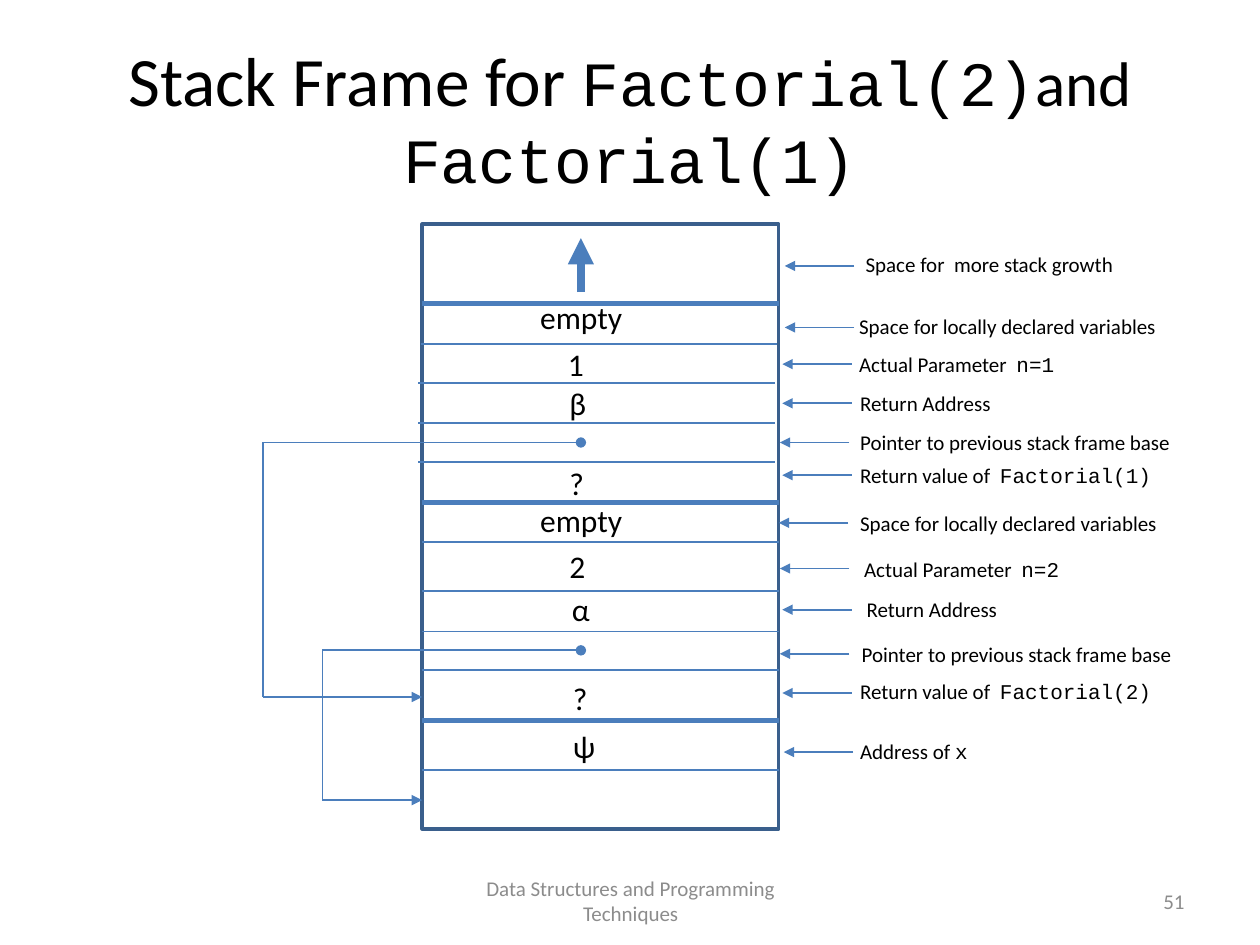
from lxml.etree import SubElement
from pptx import Presentation
from pptx.dml.color import RGBColor
from pptx.enum.shapes import MSO_CONNECTOR, MSO_SHAPE
from pptx.enum.text import MSO_ANCHOR, PP_ALIGN
from pptx.oxml.ns import qn
from pptx.util import Cm, Pt

COLORS = {"text": "000000", "muted": "8C8C8C", "line": "4B7EBC",
          "border": "3A5F8C", "fill": "FFFFFF"}
SANS, MONO = "Calibri", "Courier New"

STACK_LEFT, STACK_TOP, STACK_WIDTH, STACK_HEIGHT = 8.51, 4.52, 7.19, 12.19
CENTER_X = 11.71
ARROW_LENGTH = 1.4

DIVIDERS = [
    (8.51, 6.12, 3), (8.48, 6.93, 1), (8.43, 7.72, 1), (8.43, 8.53, 1),
    (8.43, 9.32, 1), (8.51, 10.13, 3), (8.51, 10.92, 1), (8.51, 11.91, 1),
    (8.51, 12.73, 1), (8.51, 13.51, 1), (8.51, 14.53, 3), (8.51, 15.52, 1),
]
VALUES = [
    ("empty", 10.64, 5.89), ("1", 11.2, 6.83), ("β", 11.23, 7.62),
    ("?", 11.23, 9.22), ("empty", 10.64, 9.98), ("2", 11.23, 10.9),
    ("α", 11.28, 11.76), ("?", 11.3, 13.56), ("ψ", 11.3, 14.53),
]
LOCALS = "Space for locally declared variables"
POINTER = "Pointer to previous stack frame base"
CALLOUTS = [
    ("Space for  more stack growth", "", 17.2, 4.95, 15.82, 5.36),
    (LOCALS, "", 17.07, 6.2, 15.82, 6.6),
    ("Actual Parameter  ", "n=1", 17.07, 6.96, 15.77, 7.34),
    ("Return Address", "", 17.09, 7.75, 15.77, 8.13),
    (POINTER, "", 17.09, 8.53, 15.72, 8.92),
    ("Return value of  ", "Factorial(1)", 17.09, 9.19, 15.77, 9.58),
    (LOCALS, "", 17.09, 10.16, 15.7, 10.54),
    ("Actual Parameter  ", "n=2", 17.17, 11.1, 15.72, 11.46),
    ("Return Address", "", 17.22, 11.91, 15.77, 12.29),
    (POINTER, "", 17.12, 12.8, 15.72, 13.18),
    ("Return value of  ", "Factorial(2)", 17.09, 13.56, 15.77, 13.97),
    ("Address of ", "x", 17.09, 14.76, 15.8, 15.16),
]
FRAME_POINTERS = [(5.31, 8.92, 14.05), (6.5, 13.11, 16.13)]


def rgb(name):
    return RGBColor.from_string(COLORS[name])


def add_text(s, runs, left, top, width, height, size, color="text",
             align=PP_ALIGN.LEFT, anchor=MSO_ANCHOR.TOP):
    tf = s.shapes.add_textbox(Cm(left), Cm(top), Cm(width), Cm(height)).text_frame
    tf.word_wrap = True
    tf.vertical_anchor = anchor
    p = tf.paragraphs[0]
    p.alignment = align
    p.font.size = Pt(size)
    p.font.color.rgb = rgb(color)
    if len(runs) == 1:
        p.font.name = runs[0][1]
    for text, font, *run_size in runs:
        r = p.add_run()
        r.text = text
        if len(runs) > 1:
            r.font.name = font
        if run_size:
            r.font.size = Pt(run_size[0])


def add_line(s, x1, y1, x2, y2, width=1, head=None, tail=None):
    c = s.shapes.add_connector(MSO_CONNECTOR.STRAIGHT, Cm(x1), Cm(y1), Cm(x2), Cm(y2))
    c.line.color.rgb = rgb("line")
    c.line.width = Pt(width)
    ln = c.line._get_or_add_ln()
    for tag, kind in (("a:headEnd", head), ("a:tailEnd", tail)):
        if kind:
            SubElement(ln, qn(tag), type=kind)
    SubElement(c._element.spPr, qn("a:effectLst"))


def add_stack(s):
    sp = s.shapes.add_shape(MSO_SHAPE.RECTANGLE, Cm(STACK_LEFT), Cm(STACK_TOP),
                            Cm(STACK_WIDTH), Cm(STACK_HEIGHT))
    sp.shadow.inherit = False
    sp.fill.solid()
    sp.fill.fore_color.rgb = rgb("fill")
    sp.line.color.rgb = rgb("border")
    sp.line.width = Pt(2)
    for left, y, width in DIVIDERS:
        add_line(s, left, y, left + STACK_WIDTH, y, width)
    for text, left, top in VALUES:
        add_text(s, [(text, SANS)], left, top, 2.77 if len(text) > 1 else 1.6, 1.02, 18)
    add_line(s, CENTER_X, 5.89, CENTER_X, 4.8, 5, tail="triangle")


def add_callout(s, text, code, left, top, tip, y):
    runs = [(text, SANS)]
    if code:
        runs.append((code, MONO))
    add_text(s, runs, left, top, 7.11, 0.76, 12)
    add_line(s, tip + ARROW_LENGTH, y, tip, y, tail="triangle")


def add_frame_pointer(s, x, start_y, end_y):
    add_line(s, CENTER_X, start_y, x, start_y, head="oval")
    add_line(s, x, start_y, x, end_y)
    add_line(s, x, end_y, STACK_LEFT, end_y, tail="triangle")


def main():
    prs = Presentation()
    prs.slide_width, prs.slide_height = Cm(25.4), Cm(19.05)
    s = prs.slides.add_slide(prs.slide_layouts[6])
    title = [("Stack Frame for ", SANS, 39.6), ("Factorial(2)", MONO),
             ("and", SANS), (" Factorial(1)", MONO)]
    add_text(s, title, 1.27, 0.76, 22.86, 3.18, 36,
             align=PP_ALIGN.CENTER, anchor=MSO_ANCHOR.MIDDLE)
    add_stack(s)
    for callout in CALLOUTS:
        add_callout(s, *callout)
    for pointer in FRAME_POINTERS:
        add_frame_pointer(s, *pointer)
    add_text(s, [("Data Structures and Programming Techniques", SANS)],
             8.69, 17.65, 8.05, 1.02, 12, "muted", PP_ALIGN.CENTER, MSO_ANCHOR.MIDDLE)
    add_text(s, [("51", SANS)], 18.21, 17.65, 5.92, 1.02, 12, "muted",
             PP_ALIGN.RIGHT, MSO_ANCHOR.MIDDLE)
    prs.save("out.pptx")


if __name__ == "__main__":
    main()
